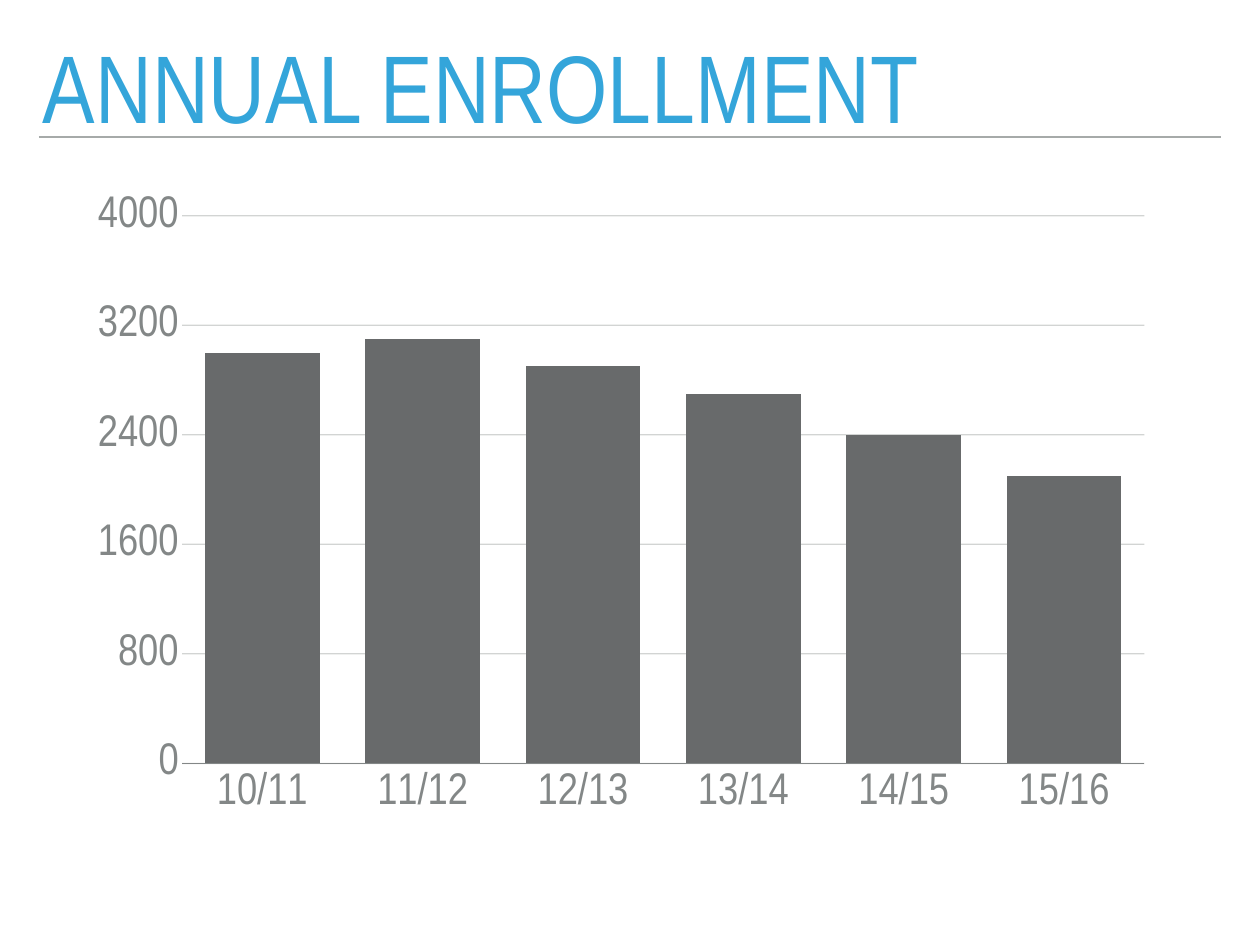
from dataclasses import dataclass

from lxml import etree
from pptx import Presentation
from pptx.chart.data import CategoryChartData
from pptx.dml.color import RGBColor
from pptx.enum.chart import XL_CHART_TYPE, XL_TICK_LABEL_POSITION, XL_TICK_MARK
from pptx.enum.shapes import MSO_CONNECTOR
from pptx.enum.text import MSO_ANCHOR
from pptx.oxml import parse_xml
from pptx.oxml.ns import nsdecls, qn
from pptx.util import Emu, Pt

EMU_PER_PX = 10320
FONT = "Arial Narrow"
BLUE, GRAY, RULE_GRAY, BAR_GRAY = "34A5DA", "838787", "A6AAA9", "686A6B"


@dataclass(frozen=True)
class Box:
    left: int
    top: int
    width: int
    height: int

    def emu(self) -> tuple[Emu, Emu, Emu, Emu]:
        return px(self.left), px(self.top), px(self.width), px(self.height)


@dataclass(frozen=True)
class Enrollment:
    year: str
    students: int


TITLE_BOX = Box(38, 36, 1181, 119)
CHART_BOX = Box(87, 169, 1058, 668)
ENROLLMENTS = [
    Enrollment("10/11", 3000),
    Enrollment("11/12", 3100),
    Enrollment("12/13", 2900),
    Enrollment("13/14", 2700),
    Enrollment("14/15", 2400),
    Enrollment("15/16", 2100),
]


def px(length: int) -> Emu:
    return Emu(length * EMU_PER_PX)


def color(value: str) -> RGBColor:
    return RGBColor.from_string(value)


def style_font(font, size: int, value: str) -> None:
    font.name, font.size = FONT, Pt(size)
    font.color.rgb = color(value)


def style_line(line, value: str, points: int) -> None:
    line.color.rgb = color(value)
    line.width = Pt(points)


def add_title(slide, text: str) -> None:
    frame = slide.shapes.add_textbox(*TITLE_BOX.emu()).text_frame
    frame.word_wrap = True
    frame.vertical_anchor = MSO_ANCHOR.MIDDLE
    frame.margin_left = frame.margin_right = px(5)
    frame.margin_top = frame.margin_bottom = px(5)
    heading = frame.paragraphs[0]
    heading.text = text
    heading.line_spacing = 0.8
    style_font(heading.font, 78, BLUE)


def add_rule(slide, left: int, right: int, y: int) -> None:
    rule = slide.shapes.add_connector(
        MSO_CONNECTOR.STRAIGHT, px(left), px(y), px(right), px(y))
    style_line(rule.line, RULE_GRAY, 2)
    etree.SubElement(rule._element.spPr, qn("a:effectLst"))


def style_axis(axis) -> None:
    axis.major_tick_mark = axis.minor_tick_mark = XL_TICK_MARK.NONE
    style_font(axis.tick_labels.font, 36, GRAY)
    axis.tick_labels.number_format = "General"
    axis.tick_labels.number_format_is_linked = False


def place_plot_area(chart) -> None:
    fractions = {"x": 0.09, "y": 0.07, "w": 0.91, "h": 0.82}
    modes = "".join(f'<c:{side}Mode val="edge"/>' for side in "xy")
    sizes = "".join(f'<c:{key} val="{part}"/>' for key, part in fractions.items())
    layout = parse_xml(
        f'<c:layout {nsdecls("c")}><c:manualLayout><c:layoutTarget val="inner"/>'
        f"{modes}{sizes}</c:manualLayout></c:layout>")
    plot_area = chart._chartSpace.chart.plotArea
    for automatic in plot_area.findall(qn("c:layout")):
        plot_area.remove(automatic)
    plot_area.insert(0, layout)


def add_enrollment_chart(slide, enrollments: list[Enrollment]) -> None:
    data = CategoryChartData()
    data.categories = [entry.year for entry in enrollments]
    data.add_series("Series 1", [entry.students for entry in enrollments])
    chart = slide.shapes.add_chart(
        XL_CHART_TYPE.COLUMN_CLUSTERED, *CHART_BOX.emu(), data).chart
    chart.has_legend = chart.has_title = False
    style_font(chart.font, 10, GRAY)
    place_plot_area(chart)

    # Bars
    bars = chart.plots[0]
    bars.gap_width, bars.overlap = 40, -10
    bars.vary_by_categories = False
    fill = bars.series[0].format.fill
    fill.solid()
    fill.fore_color.rgb = color(BAR_GRAY)

    # School years
    years = chart.category_axis
    style_axis(years)
    years.tick_label_position = XL_TICK_LABEL_POSITION.LOW
    style_line(years.format.line, GRAY, 1)

    # Student counts with half-transparent gridlines
    counts = chart.value_axis
    style_axis(counts)
    counts.minimum_scale, counts.maximum_scale = 0, 4000
    counts.major_unit = 800
    counts.format.line.fill.background()
    counts.has_major_gridlines = True
    gridlines = counts.major_gridlines
    style_line(gridlines.format.line, RULE_GRAY, 1)
    for tint in gridlines._xAx.find(qn("c:majorGridlines")).iter(qn("a:srgbClr")):
        etree.SubElement(tint, qn("a:alpha"), val="50000")


def main() -> None:
    deck = Presentation()
    deck.slide_width, deck.slide_height = px(1260), px(945)
    slide = deck.slides.add_slide(deck.slide_layouts[6])
    add_title(slide, "ANNUAL ENROLLMENT")
    add_rule(slide, left=39, right=1221, y=137)
    add_enrollment_chart(slide, ENROLLMENTS)
    deck.save("out.pptx")


if __name__ == "__main__":
    main()
